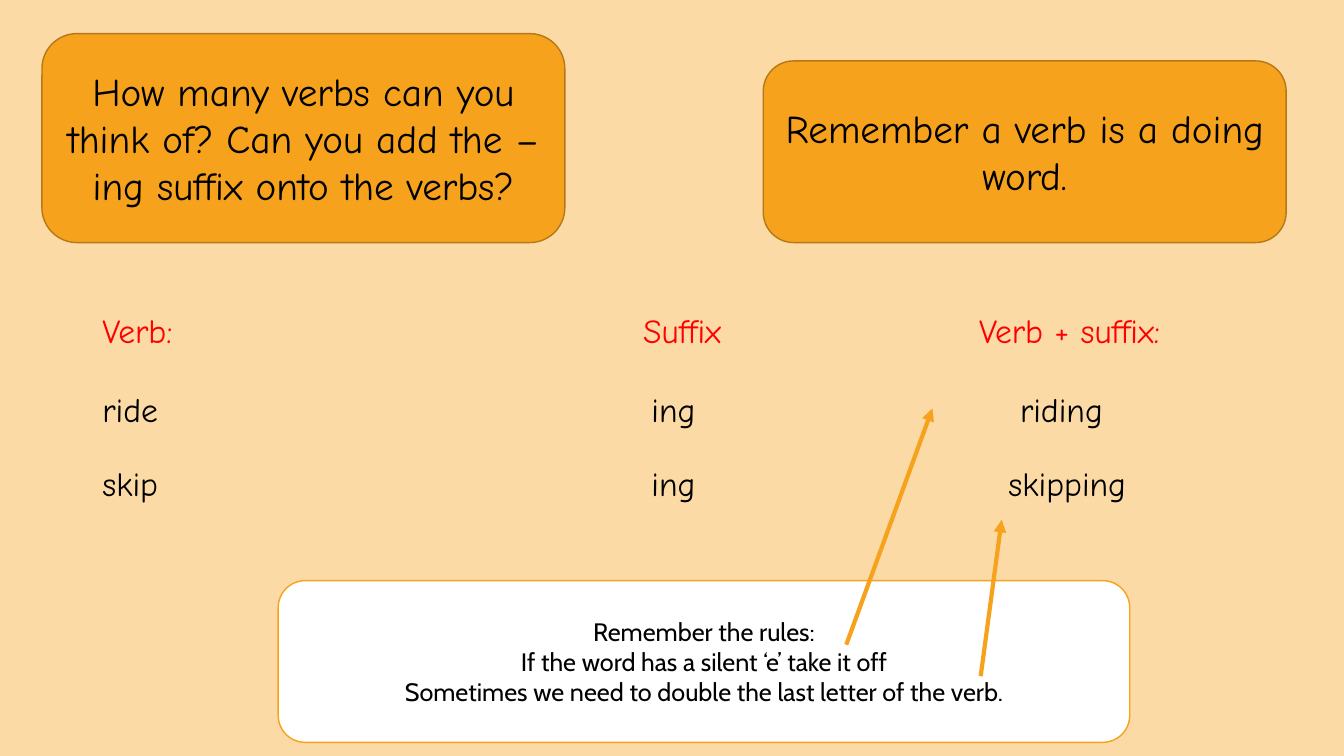
from lxml import etree
from pptx import Presentation
from pptx.dml.color import RGBColor
from pptx.enum.shapes import MSO_CONNECTOR, MSO_SHAPE
from pptx.enum.text import MSO_ANCHOR, MSO_AUTO_SIZE, PP_ALIGN
from pptx.oxml.ns import qn
from pptx.util import Pt

PX = 9525  # EMU in one px, 96 px to the inch

CREAM, ORANGE, BROWN = "FBDAA5", "F6A21D", "B67815"
BLACK, WHITE, RED = "000000", "FFFFFF", "FF0000"
HANDWRITING, PLAIN = "Comic Neue", "Cabin"

# Cells, left edges of the second and third cell, space before, colour
WORD_ROWS = [
    (("Verb:", "Suffix", "Verb + suffix:"), (515, 835), 0, RED),
    (("ride", "ing", "riding"), (523, 874), 28, BLACK),
    (("skip", "ing", "skipping"), (523, 863), 24, BLACK),
]


def px(*lengths):
    return [length * PX for length in lengths]


def color(hex_value):
    return RGBColor.from_string(hex_value)


def write(paragraph, text, font, size, hex_value=BLACK):
    run = paragraph.add_run()
    run.text = text
    for name, value in {"name": font, "size": Pt(size)}.items():
        setattr(run.font, name, value)
    run.font.color.rgb = color(hex_value)


def add_card(slide, box, lines, font, size, fill=ORANGE, border=BROWN):
    card = slide.shapes.add_shape(MSO_SHAPE.ROUNDED_RECTANGLE, *px(*box))
    card.shadow.inherit = False
    card.fill.solid()
    card.fill.fore_color.rgb = color(fill)
    card.line.color.rgb = color(border)
    card.line.width = Pt(1)
    frame = card.text_frame
    for name, value in {"word_wrap": True, "vertical_anchor": MSO_ANCHOR.MIDDLE}.items():
        setattr(frame, name, value)
    for index, line in enumerate(lines):
        paragraph = frame.add_paragraph() if index else frame.paragraphs[0]
        paragraph.alignment = PP_ALIGN.CENTER
        write(paragraph, line, font, size)


def add_tab_stops(paragraph, stops):
    tab_list = etree.SubElement(paragraph._p.get_or_add_pPr(), qn("a:tabLst"))
    for position in px(*stops):
        etree.SubElement(tab_list, qn("a:tab"), pos=str(position), algn="l")


def add_word_columns(slide, box, rows):
    frame = slide.shapes.add_textbox(*px(*box)).text_frame
    frame.word_wrap = True
    frame.auto_size = MSO_AUTO_SIZE.SHAPE_TO_FIT_TEXT
    for index, (words, stops, gap, hex_value) in enumerate(rows):
        paragraph = frame.add_paragraph() if index else frame.paragraphs[0]
        paragraph.space_before = Pt(gap)
        add_tab_stops(paragraph, stops)
        write(paragraph, "\t".join(words), HANDWRITING, 24, hex_value)


def add_arrow(slide, start, end):
    arrow = slide.shapes.add_connector(MSO_CONNECTOR.STRAIGHT, *px(*start, *end))
    arrow.line.color.rgb = color(ORANGE)
    arrow.line.width = Pt(3)
    etree.SubElement(arrow.line._get_or_add_ln(), qn("a:tailEnd"), type="triangle")
    etree.SubElement(arrow._element.spPr, qn("a:effectLst"))


def main():
    deck = Presentation()
    deck.slide_width, deck.slide_height = px(1280, 720)
    slide = deck.slides.add_slide(deck.slide_layouts[6])
    slide.background.fill.solid()
    slide.background.fill.fore_color.rgb = color(CREAM)

    # Question and reminder
    add_card(slide, (40, 32, 498, 199),
             ["How many verbs can you think of? Can you add the –ing suffix onto the verbs?"],
             HANDWRITING, 28)
    add_card(slide, (727, 58, 498, 173), ["Remember a verb is a doing word."],
             HANDWRITING, 28)

    # Verbs with their suffixes
    add_word_columns(slide, (88, 290, 1146, 197), WORD_ROWS)

    # Spelling rules
    add_card(slide, (265, 553, 811, 154),
             ["Remember the rules:",
              "If the word has a silent ‘e’ take it off",
              "Sometimes we need to double the last letter of the verb."],
             PLAIN, 18, fill=WHITE, border=ORANGE)

    # Arrows from each rule to its example
    add_arrow(slide, (934, 644), (954, 495))
    add_arrow(slide, (806, 614), (888, 389))

    deck.save("out.pptx")


if __name__ == "__main__":
    main()
